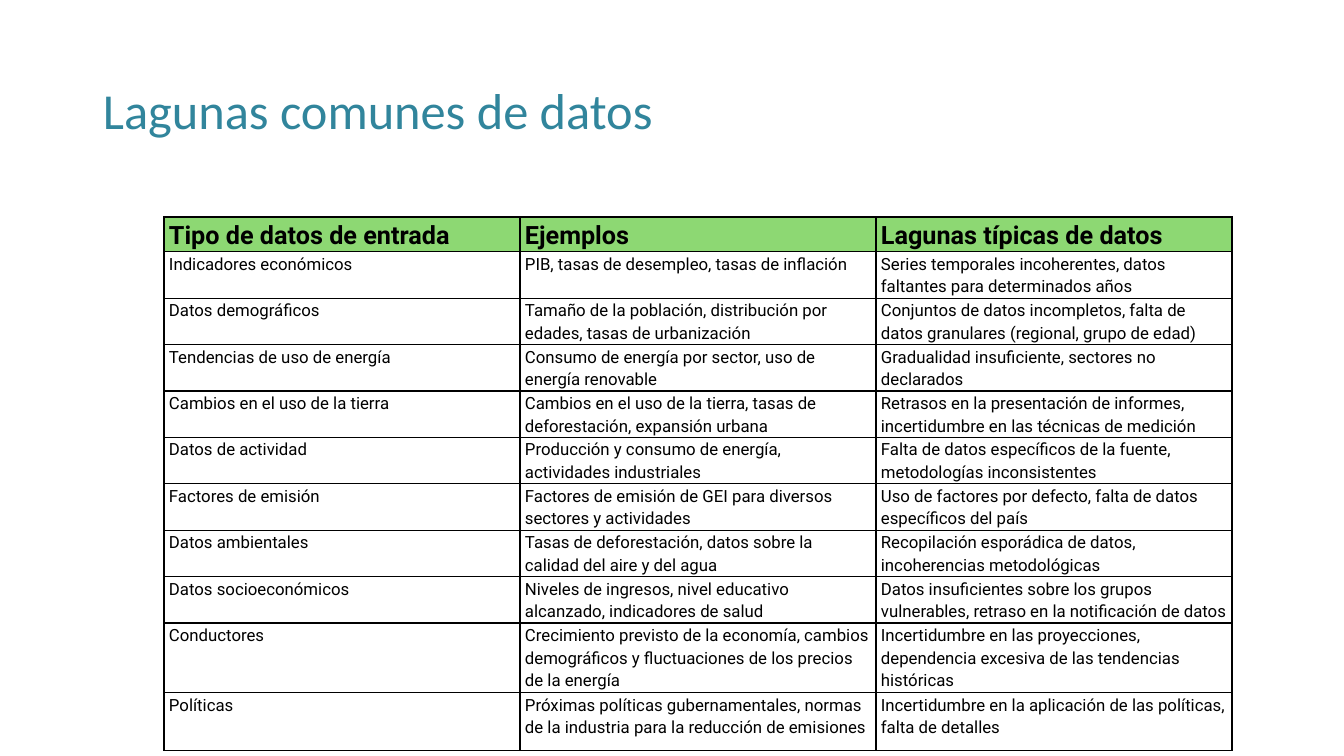
from dataclasses import dataclass

from lxml.etree import SubElement
from pptx import Presentation
from pptx.dml.color import RGBColor as RGB
from pptx.enum.text import MSO_ANCHOR as Anchor
from pptx.oxml.ns import qn
from pptx.util import Emu, Pt

SCALE = 914400 / 100.8  # EMU in one px


def px(n):
    return Emu(round(n * SCALE))


@dataclass(frozen=True)
class Theme:
    title_font: str = "Calibri"
    table_font: str = "Roboto"
    teal: str = "31859C"
    green: str = "8DD873"
    black: str = "000000"
    title_size: int = 36
    header_size: int = 18
    body_size: int = 12
    border_width: int = 1


class SlideBuilder:
    def __init__(self, prs, theme):
        self.theme = theme
        self.s = prs.slides.add_slide(prs.slide_layouts[6])

    def style(self, p, font, size, color, spacing, bold=False):
        p.line_spacing = spacing
        for r in p.runs:
            r.font.name, r.font.size, r.font.bold = font, Pt(size), bold
            r.font.color.rgb = RGB.from_string(color)

    def title(self, text, x, y, w, h):
        t = self.theme
        tf = self.s.shapes.add_textbox(px(x), px(y), px(w), px(h)).text_frame
        tf.word_wrap = True
        tf.vertical_anchor = Anchor.MIDDLE
        tf.text = text
        self.style(tf.paragraphs[0], t.title_font, t.title_size, t.teal, 0.9)

    def borders(self, cell):
        tc_pr = cell._tc.get_or_add_tcPr()
        for side in ("lnL", "lnR", "lnT", "lnB"):
            ln = SubElement(tc_pr, qn(f"a:{side}"), w=str(Pt(self.theme.border_width)))
            fill = SubElement(ln, qn("a:solidFill"))
            SubElement(fill, qn("a:srgbClr"), val=self.theme.black)

    def cell(self, cell, text, header):
        t = self.theme
        cell.margin_left = cell.margin_right = px(5)
        cell.margin_top = cell.margin_bottom = 0
        cell.text = text
        p = cell.text_frame.paragraphs[0]
        p.space_after = Pt(8)
        size = t.header_size if header else t.body_size
        self.style(p, t.table_font, size, t.black, 1.15, header)
        self.borders(cell)
        if header:
            cell.fill.solid()
            cell.fill.fore_color.rgb = RGB.from_string(t.green)
        else:
            cell.fill.background()

    def table(self, rows, x, y, col_width, row_heights, h):
        cols = len(rows[0])
        frame = self.s.shapes.add_table(
            len(rows), cols, px(x), px(y), px(col_width * cols), px(h))
        table = frame.table
        table.horz_banding = False
        for column in table.columns:
            column.width = px(col_width)
        for i, (texts, height) in enumerate(zip(rows, row_heights)):
            table.rows[i].height = px(height)
            for j, text in enumerate(texts):
                self.cell(table.cell(i, j), text, header=i == 0)
        frame.height = px(h)


DATA_GAPS = [
    ("Tipo de datos de entrada", "Ejemplos", "Lagunas típicas de datos"),
    ("Indicadores económicos",
     "PIB, tasas de desempleo, tasas de inflación",
     "Series temporales incoherentes, datos faltantes para determinados años"),
    ("Datos demográficos",
     "Tamaño de la población, distribución por edades, tasas de urbanización",
     "Conjuntos de datos incompletos, falta de datos granulares (regional, grupo de edad)"),
    ("Tendencias de uso de energía",
     "Consumo de energía por sector, uso de energía renovable",
     "Gradualidad insuficiente, sectores no declarados"),
    ("Cambios en el uso de la tierra",
     "Cambios en el uso de la tierra, tasas de deforestación, expansión urbana",
     "Retrasos en la presentación de informes, incertidumbre en las técnicas de medición"),
    ("Datos de actividad",
     "Producción y consumo de energía, actividades industriales",
     "Falta de datos específicos de la fuente, metodologías inconsistentes"),
    ("Factores de emisión",
     "Factores de emisión de GEI para diversos sectores y actividades",
     "Uso de factores por defecto, falta de datos específicos del país"),
    ("Datos ambientales",
     "Tasas de deforestación, datos sobre la calidad del aire y del agua",
     "Recopilación esporádica de datos, incoherencias metodológicas"),
    ("Datos socioeconómicos",
     "Niveles de ingresos, nivel educativo alcanzado, indicadores de salud",
     "Datos insuficientes sobre los grupos vulnerables, retraso en la notificación de datos"),
    ("Conductores",
     "Crecimiento previsto de la economía, cambios demográficos y fluctuaciones de los "
     "precios de la energía",
     "Incertidumbre en las proyecciones, dependencia excesiva de las tendencias históricas"),
    ("Políticas",
     "Próximas políticas gubernamentales, normas de la industria para la reducción de emisiones",
     "Incertidumbre en la aplicación de las políticas, falta de detalles"),
]


def main():
    prs = Presentation()
    prs.slide_width, prs.slide_height = px(1344), px(756)
    slide = SlideBuilder(prs, Theme())

    # Title
    slide.title("Lagunas comunes de datos", 93, 40, 1159, 146)

    # Table of data gaps: header, eight two-line rows, two taller rows
    slide.table(DATA_GAPS, 164, 217, 356, [14] + [43] * 8 + [58] * 2, 521)

    prs.save("out.pptx")


if __name__ == "__main__":
    main()
